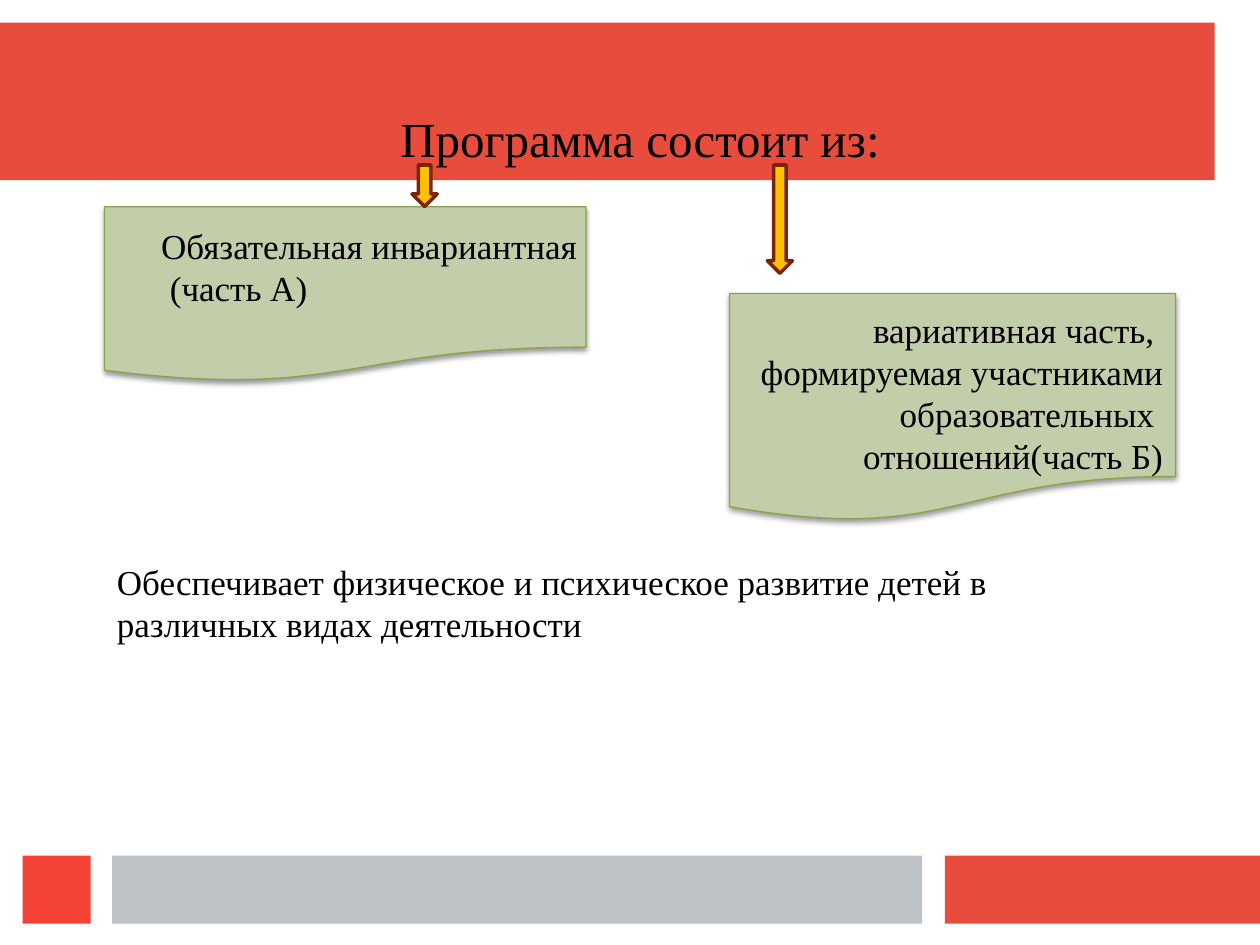
from lxml import etree
from pptx import Presentation
from pptx import util as u
from pptx.dml.color import RGBColor
from pptx.enum import shapes, text
from pptx.oxml.ns import qn

COLORS = {
    "red": "E74C3C",
    "bright_red": "F44336",
    "gray": "BDC3C7",
    "green": "C2CDA9",
    "olive": "8BA248",
    "yellow": "FFC000",
    "brown": "7A240C",
    "black": "000000",
}
SHAPE = shapes.MSO_SHAPE
ALIGN = text.PP_ALIGN


class SlideBuilder:
    font = "Times New Roman"

    def __init__(self, slide):
        self.slide = slide

    def color(self, name):
        return RGBColor.from_string(COLORS[name])

    def shape(self, kind, box, fill, line=None, width=1):
        shape = self.slide.shapes.add_shape(kind, *map(u.Inches, box))
        shape.shadow.inherit = False
        shape.fill.solid()
        shape.fill.fore_color.rgb = self.color(fill)
        if line:
            shape.line.color.rgb = self.color(line)
            shape.line.width = u.Pt(width)
        else:
            shape.line.fill.background()
        return shape

    def bar(self, box, fill):
        return self.shape(SHAPE.RECTANGLE, box, fill)

    def document(self, box):
        shape = self.shape(SHAPE.FLOWCHART_DOCUMENT, box, "green", "olive", 0.75)
        effects = shape._element.spPr.find(qn("a:effectLst"))
        shadow = etree.SubElement(
            effects, qn("a:outerShdw"), blurRad=str(u.Pt(3.1)),
            dist=str(u.Pt(1.6)), dir="5400000", rotWithShape="0")
        color = etree.SubElement(shadow, qn("a:srgbClr"), val=COLORS["black"])
        etree.SubElement(color, qn("a:alpha"), val="38000")
        return shape

    def arrow(self, left, height):
        return self.shape(SHAPE.DOWN_ARROW, (left, 1.31, 0.2, height),
                          "yellow", "brown", 2)

    def text_box(self, box, lines):
        frame = self.slide.shapes.add_textbox(*map(u.Inches, box)).text_frame
        frame.word_wrap = True
        for index, (content, size, align, indent, before) in enumerate(lines):
            paragraph = frame.add_paragraph() if index else frame.paragraphs[0]
            paragraph.alignment = align
            paragraph.space_before = u.Pt(before)
            if indent:
                paragraph._p.get_or_add_pPr().set("marL", str(u.Inches(indent)))
            run = paragraph.add_run()
            run.text = content
            run.font.name = self.font
            run.font.size = u.Pt(size)
            run.font.color.rgb = self.color("black")


def main():
    presentation = Presentation()
    presentation.slide_width = u.Inches(10)
    presentation.slide_height = u.Inches(7.5)
    slide = presentation.slides.add_slide(presentation.slide_layouts[6])
    builder = SlideBuilder(slide)

    builder.bar((0, 0.18, 9.64, 1.25), "red")
    for left, width, fill in ((7.5, 2.5, "red"), (0.89, 6.43, "gray"),
                              (0.18, 0.54, "bright_red")):
        builder.bar((left, 6.79, width, 0.54), fill)

    builder.document((0.83, 1.64, 3.82, 1.39))
    builder.document((5.79, 2.33, 3.54, 1.81))

    variable_part = ("вариативная часть, ", "формируемая участниками",
                     "образовательных ", "отношений(часть Б)")
    builder.text_box((0.83, 0.81, 8.5, 4.23), [
        ("Программа состоит из:", 28, ALIGN.CENTER, 0, 0),
        ("Обязательная инвариантная", 20, ALIGN.LEFT, 0.35, 33),
        ("(часть А)", 20, ALIGN.LEFT, 0.42, 0),
        *[(line, 20, ALIGN.RIGHT, 0, 0) for line in variable_part],
        ("Обеспечивает физическое и психическое развитие детей в",
         20, ALIGN.LEFT, 0, 48),
        ("различных видах деятельности", 20, ALIGN.LEFT, 0, 0),
    ])

    builder.arrow(3.27, 0.33)
    builder.arrow(6.09, 0.86)
    presentation.save("out.pptx")


if __name__ == "__main__":
    main()
